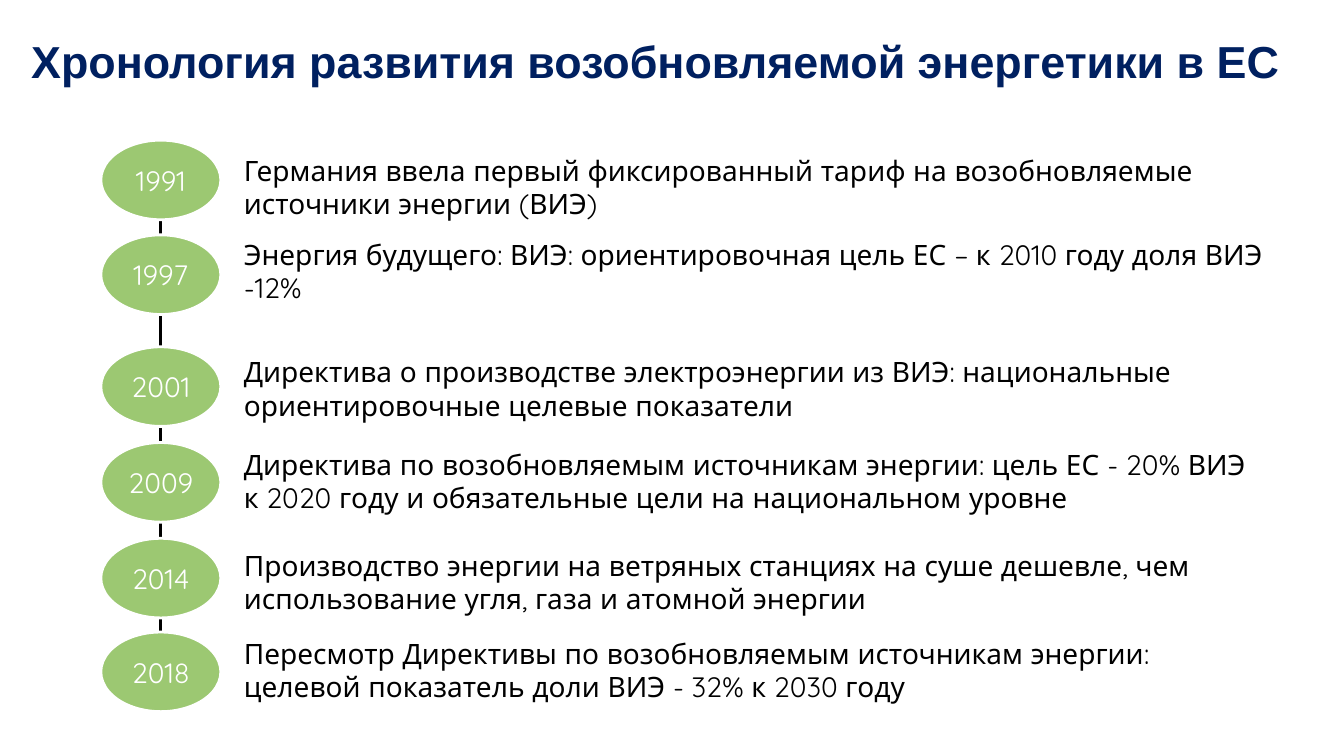
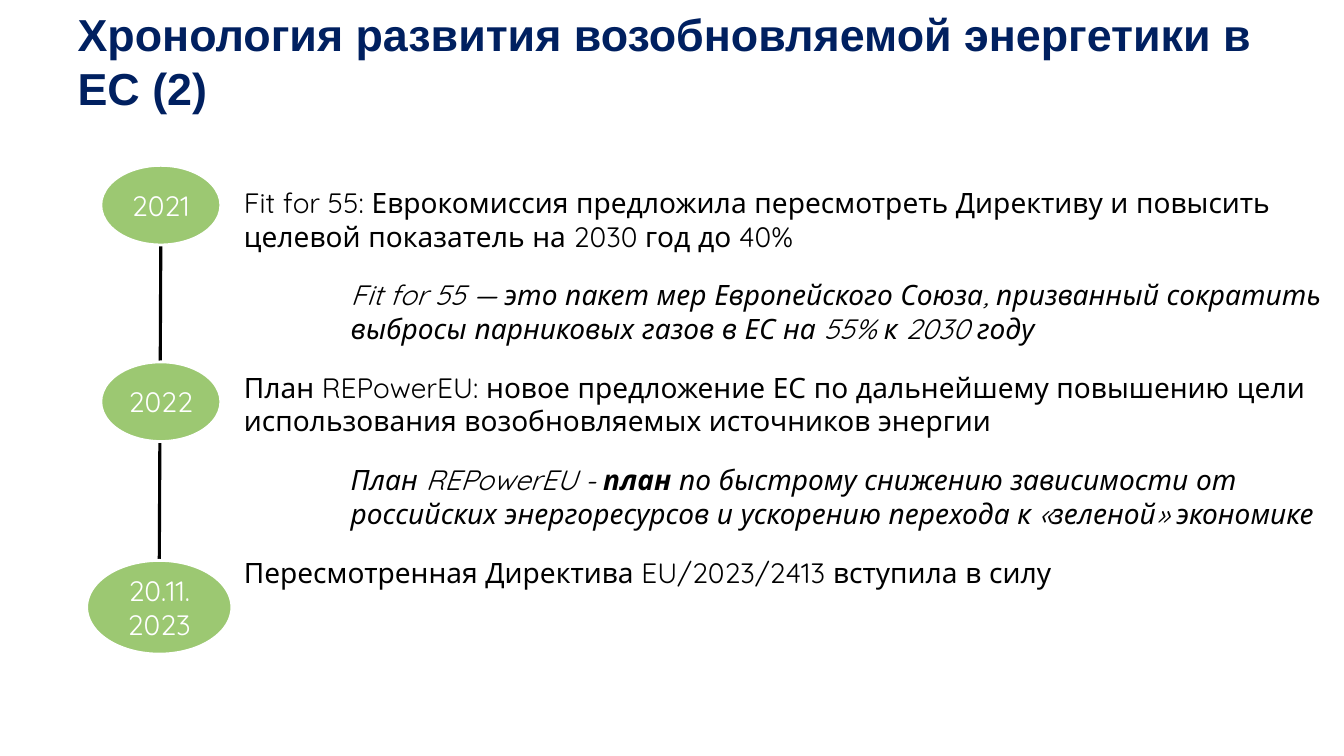
from dataclasses import dataclass

from lxml import etree
from pptx import Presentation
from pptx import util as u
from pptx.dml.color import RGBColor
from pptx.enum import shapes, text
from pptx.oxml.ns import qn


@dataclass(frozen=True)
class Theme:
    title_font: str = "Arial"
    body_font: str = "Quicksand"
    title_size: int = 32
    body_size: int = 20
    navy: RGBColor = RGBColor(0x00, 0x20, 0x60)
    green: RGBColor = RGBColor(0x9C, 0xC8, 0x72)
    black: RGBColor = RGBColor(0, 0, 0)
    white: RGBColor = RGBColor(0xFF, 0xFF, 0xFF)


THEME = Theme()
TITLE_HEIGHT = 1.2
BODY_LEFT = 2.32
BODY_HEIGHT = 4.95
NOTE_INDENT = 1.06
OVAL_SIZE = (1.19, 0.79)
OVAL_LEFT = 1


@dataclass(frozen=True)
class Entry:
    """A timeline text; spans marked ** are bold, notes are indented and italic."""
    words: str
    before: int = 6
    after: int = 6
    note: bool = False


@dataclass(frozen=True)
class Milestone:
    label: str
    top: float
    left: float = OVAL_LEFT
    size: tuple = OVAL_SIZE

    @property
    def center(self):
        return self.left + self.size[0] / 2

    @property
    def bottom(self):
        return self.top + self.size[1]


def style_font(font, name, size, color, bold=False, italic=False):
    font.name = name
    font.size = u.Pt(size)
    font.color.rgb = color
    font.bold = bold
    font.italic = italic


def place_title(page, words, left, width):
    title = page.shapes.title
    title.left, title.top = u.Inches(left), u.Inches(0)
    title.width, title.height = u.Inches(width), u.Inches(TITLE_HEIGHT)
    frame = title.text_frame
    frame.text = words
    frame.word_wrap = True
    frame.auto_size = text.MSO_AUTO_SIZE.NONE
    frame.vertical_anchor = text.MSO_ANCHOR.MIDDLE
    para = frame.paragraphs[0]
    para.alignment = text.PP_ALIGN.LEFT
    style_font(para.font, THEME.title_font, THEME.title_size, THEME.navy, bold=True)


def place_entries(page, entries, top, width):
    box = page.shapes.add_textbox(u.Inches(BODY_LEFT), u.Inches(top),
                                  u.Inches(width), u.Inches(BODY_HEIGHT))
    frame = box.text_frame
    frame.word_wrap = True
    for index, entry in enumerate(entries):
        para = frame.add_paragraph() if index else frame.paragraphs[0]
        para.space_before = u.Pt(entry.before if index else 0)
        para.space_after = u.Pt(entry.after)
        if entry.note:
            para._p.get_or_add_pPr().set("marL", str(u.Inches(NOTE_INDENT)))
        style_font(para.font, THEME.body_font, THEME.body_size, THEME.black,
                   italic=entry.note)
        for part, words in enumerate(entry.words.split("**")):
            span = para.add_run()
            span.text = words
            if part % 2:
                span.font.bold = True


def place_axis(page, first, last):
    axis = page.shapes.add_connector(
        shapes.MSO_CONNECTOR.STRAIGHT,
        u.Inches(first.center), u.Inches(first.bottom),
        u.Inches(last.center), u.Inches(last.top))
    axis.line.color.rgb = THEME.black
    axis.line.width = u.Pt(2.25)
    etree.SubElement(axis._element.spPr, qn("a:effectLst"))


def place_milestone(page, milestone):
    width, height = milestone.size
    oval = page.shapes.add_shape(
        shapes.MSO_SHAPE.OVAL, u.Inches(milestone.left), u.Inches(milestone.top),
        u.Inches(width), u.Inches(height))
    oval.shadow.inherit = False
    oval.fill.solid()
    oval.fill.fore_color.rgb = THEME.green
    oval.line.color.rgb = THEME.white
    oval.line.width = u.Pt(2)
    frame = oval.text_frame
    frame.text = milestone.label
    frame.word_wrap = True
    frame.vertical_anchor = text.MSO_ANCHOR.MIDDLE
    para = frame.paragraphs[0]
    para.alignment = text.PP_ALIGN.CENTER
    style_font(para.font, THEME.body_font, THEME.body_size, THEME.white)


def add_timeline_slide(deck, title, title_span, entries, body_top, body_width, milestones):
    page = deck.slides.add_slide(deck.slide_layouts[5])
    place_title(page, title, *title_span)
    place_entries(page, entries, body_top, body_width)
    place_axis(page, milestones[0], milestones[-1])
    for milestone in milestones:
        place_milestone(page, milestone)


EARLY_ENTRIES = [
    Entry("Германия ввела первый фиксированный тариф на возобновляемые источники энергии (ВИЭ)"),
    Entry("Энергия будущего: ВИЭ: ориентировочная цель ЕС – к 2010 году доля ВИЭ -12%"),
    Entry("Директива о производстве электроэнергии из ВИЭ: национальные ориентировочные "
          "целевые показатели", before=30),
    Entry("Директива по возобновляемым источникам энергии: цель ЕС - 20% ВИЭ к 2020 году "
          "и обязательные цели на национальном уровне", before=12, after=12),
    Entry("Производство энергии на ветряных станциях на суше дешевле, чем использование "
          "угля, газа и атомной энергии", before=12, after=12),
    Entry("Пересмотр Директивы по возобновляемым источникам энергии: целевой показатель "
          "доли ВИЭ - 32% к 2030 году", before=3),
]
EARLY_MILESTONES = [
    Milestone("1991", 1.39), Milestone("1997", 2.33), Milestone("2001", 3.44),
    Milestone("2009", 4.39), Milestone("2014", 5.34), Milestone("2018", 6.27),
]
RECENT_ENTRIES = [
    Entry("Fit for 55: Еврокомиссия предложила пересмотреть Директиву и повысить целевой "
          "показатель на 2030 год до 40%", after=12),
    Entry("Fit for 55 — это пакет мер Европейского Союза, призванный сократить выбросы "
          "парниковых газов в ЕС на 55% к 2030 году", after=12, note=True),
    Entry("План REPowerEU: новое предложение ЕС по дальнейшему повышению цели "
          "использования возобновляемых источников энергии", after=12),
    Entry("План REPowerEU - **план** по быстрому снижению зависимости от российских "
          "энергоресурсов и ускорению перехода к «зеленой» экономике", after=12, note=True),
    Entry("Пересмотренная Директива EU/2023/2413 вступила в силу", after=12),
]
RECENT_MILESTONES = [
    Milestone("2021", 1.64), Milestone("2022", 3.59),
    Milestone("20.11. 2023", 5.56, left=0.86, size=(1.44, 0.93)),
]


def main():
    deck = Presentation()
    deck.slide_width, deck.slide_height = u.Inches(13.33), u.Inches(7.5)
    title = "Хронология развития возобновляемой энергетики в ЕС"
    add_timeline_slide(deck, title, (0.21, 12.76), EARLY_ENTRIES, 1.47, 10.31,
                       EARLY_MILESTONES)
    add_timeline_slide(deck, f"{title} (2)", (0.67, 12), RECENT_ENTRIES, 1.79, 11.01,
                       RECENT_MILESTONES)
    deck.save("out.pptx")


if __name__ == "__main__":
    main()
